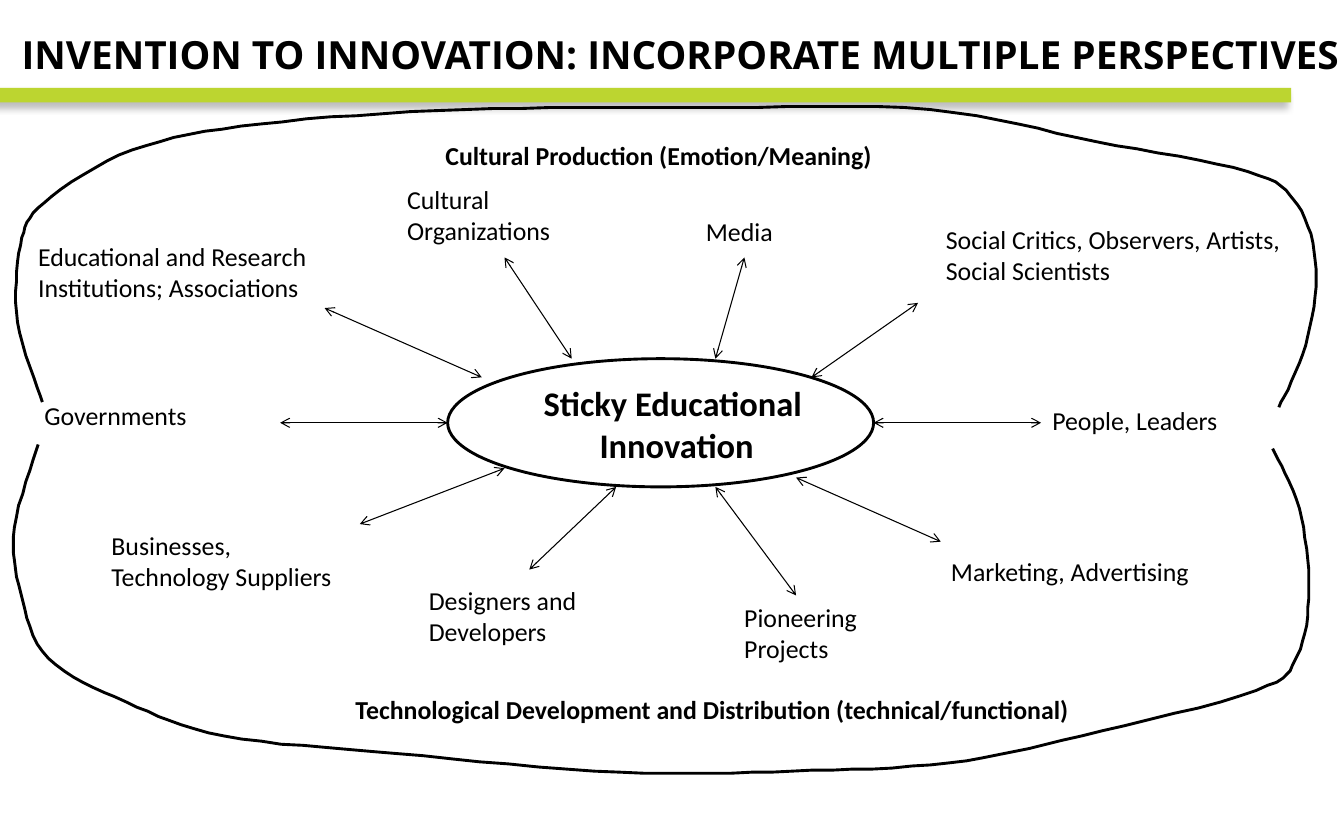
"""Build the slide on taking an invention to innovation with many perspectives."""
import dataclasses

import lxml.etree
import pptx
import pptx.dml.color
import pptx.enum.shapes
import pptx.enum.text
import pptx.oxml
import pptx.oxml.ns
import pptx.util


@dataclasses.dataclass(frozen=True)
class Theme:
    """Colours, fonts, type sizes and line widths."""
    ink: str = "000000"
    accent: str = "BCD530"
    body_font: str = "Calibri"
    title_font: str = "Open Sans"
    label_size: int = 18
    core_size: int = 24
    title_size: int = 27
    arrow_width: float = 0.75
    outline_width: float = 2


@dataclasses.dataclass(frozen=True)
class Perspective:
    """A group of people, its label box, and its arrow to the core."""
    label: str
    left: int
    top: int
    width: int
    outer_tip: tuple
    core_tip: tuple
    lines: int = 2
    wrap: bool = True


def smooth(knots, steps=8):
    """Return points along a Catmull-Rom spline through the knots."""
    padded = [knots[0], *knots, knots[-1]]
    points = [knots[0]]
    for before, start, end, after in zip(padded, padded[1:], padded[2:], padded[3:]):
        for step in range(1, steps + 1):
            t = step / steps
            points.append(tuple(
                b + (c - a) * t / 2
                + (2 * a - 5 * b + 4 * c - d) * t ** 2 / 2
                + (3 * b - a - 3 * c + d) * t ** 3 / 2
                for a, b, c, d in zip(before, start, end, after)))
    return points


class Board:
    """A slide with its theme and a method for each kind of element."""

    def __init__(self, slide, theme):
        """Keep the slide and the theme."""
        self.shapes = slide.shapes
        self.theme = theme

    def px(self, *lengths):
        """Turn px into EMU, at 100 px to the inch."""
        return [pptx.util.Emu(length * SCALE) for length in lengths]

    def color(self, value):
        """Return an RGB colour."""
        return pptx.dml.color.RGBColor.from_string(value)

    def outline(self, shape):
        """Leave a shape unfilled, with a heavy outline."""
        shape.shadow.inherit = False
        shape.fill.background()
        shape.line.color.rgb = self.color(self.theme.ink)
        shape.line.width = pptx.util.Pt(self.theme.outline_width)

    def bar(self, *box):
        """Draw the accent bar with a soft shadow."""
        bar = self.shapes.add_shape(pptx.enum.shapes.MSO_SHAPE.RECTANGLE, *self.px(*box))
        bar.fill.solid()
        bar.fill.fore_color.rgb = self.color(self.theme.accent)
        bar.line.fill.background()
        bar.shadow.inherit = False
        effects = bar._element.spPr.find(pptx.oxml.ns.qn("a:effectLst"))
        effects.append(pptx.oxml.parse_xml(
            f'<a:outerShdw {pptx.oxml.ns.nsdecls("a")} blurRad="63500" dist="63500" '
            f'dir="8100000" rotWithShape="0"><a:srgbClr val="{self.theme.ink}">'
            '<a:alpha val="25000"/></a:srgbClr></a:outerShdw>'))

    def ellipse(self, *box):
        """Draw an outlined ellipse."""
        self.outline(self.shapes.add_shape(pptx.enum.shapes.MSO_SHAPE.OVAL, *self.px(*box)))

    def curve(self, knots):
        """Draw an open, smooth outline through the knots."""
        start, *rest = smooth(knots)
        builder = self.shapes.build_freeform(*start, scale=SCALE)
        builder.add_line_segments(rest, close=False)
        self.outline(builder.convert_to_shape())

    def arrow(self, begin, end):
        """Draw a thin line with an arrowhead at both ends."""
        arrow = self.shapes.add_connector(
            pptx.enum.shapes.MSO_CONNECTOR.STRAIGHT, *self.px(*begin, *end))
        arrow.line.color.rgb = self.color(self.theme.ink)
        arrow.line.width = pptx.util.Pt(self.theme.arrow_width)
        line = arrow.line._get_or_add_ln()
        for head in ("a:headEnd", "a:tailEnd"):
            lxml.etree.SubElement(line, pptx.oxml.ns.qn(head), type="arrow")
        lxml.etree.SubElement(arrow._element.spPr, pptx.oxml.ns.qn("a:effectLst"))

    def text(self, box, words, size=None, font=None, bold=False, wrap=False, centre=False):
        """Write text in a box that grows with it."""
        frame = self.shapes.add_textbox(*self.px(*box)).text_frame
        frame.word_wrap = wrap
        frame.auto_size = pptx.enum.text.MSO_AUTO_SIZE.SHAPE_TO_FIT_TEXT
        frame.text = words
        for paragraph in frame.paragraphs:
            if centre:
                paragraph.alignment = pptx.enum.text.PP_ALIGN.CENTER
            for run in paragraph.runs:
                run.font.name = font or self.theme.body_font
                run.font.size = pptx.util.Pt(size or self.theme.label_size)
                run.font.bold = bold
                run.font.color.rgb = self.color(self.theme.ink)

    def perspective(self, group):
        """Write a group's label and join it to the core with an arrow."""
        box = (group.left, group.top, group.width, LABEL_HEIGHTS[group.lines])
        self.text(box, group.label, wrap=group.wrap)
        self.arrow(group.core_tip, group.outer_tip)


SCALE = 9144
LABEL_HEIGHTS = {1: 40, 2: 71}

CORE_LEFT, CORE_TOP, CORE_WIDTH, CORE_HEIGHT = 433, 347, 412, 124
CORE_RIGHT = CORE_LEFT + CORE_WIDTH
CORE_BOTTOM = CORE_TOP + CORE_HEIGHT
CORE_MIDDLE = CORE_TOP + CORE_HEIGHT // 2
ARROW_REACH = 162

PERSPECTIVES = [
    Perspective("Media", 673, 204, 86, (720, 249), (692, CORE_TOP), lines=1, wrap=False),
    Perspective("People, Leaders", 1008, 387, 182, (CORE_RIGHT + ARROW_REACH, CORE_MIDDLE),
                (CORE_RIGHT, CORE_MIDDLE), lines=1, wrap=False),
    Perspective("Governments", 33, 382, 319, (CORE_LEFT - ARROW_REACH, CORE_MIDDLE),
                (CORE_LEFT, CORE_MIDDLE), lines=1),
    Perspective("Cultural Organizations", 384, 173, 236, (488, 249), (553, CORE_TOP)),
    Perspective("Social Critics, Observers, Artists,\nSocial Scientists",
                905, 211, 388, (888, 293), (785, 365)),
    Perspective("Educational and Research Institutions; Associations",
                27, 228, 363, (314, 298), (466, 365)),
    Perspective("Businesses, Technology Suppliers", 98, 507, 250, (348, 507), (488, 453)),
    Perspective("Designers and Developers", 405, 561, 216, (512, 551), (596, CORE_BOTTOM)),
    Perspective("Pioneering Projects", 710, 577, 200, (770, 576), (692, CORE_BOTTOM)),
    Perspective("Marketing, Advertising", 910, 533, 253, (910, 524), (770, 462),
                lines=1, wrap=False),
]

CULTURAL_KNOTS = [
    (41, 389), (17, 312), (20, 237), (43, 196), (128, 145), (252, 120), (450, 106),
    (675, 104), (900, 106), (1060, 137), (1207, 166), (1255, 198), (1273, 260),
    (1263, 334), (1237, 394),
]
TECHNOLOGICAL_KNOTS = [
    (37, 430), (14, 510), (20, 573), (47, 637), (122, 679), (217, 712), (384, 729),
    (600, 747), (766, 746), (918, 738), (1046, 712), (1215, 668), (1255, 634),
    (1266, 570), (1257, 492), (1231, 434),
]


def main():
    """Draw the slide and save it."""
    deck = pptx.Presentation()
    theme = Theme()
    board = Board(deck.slides.add_slide(deck.slide_layouts[6]), theme)
    deck.slide_width, deck.slide_height = board.px(1300, 800)

    board.bar(-32, 85, 1281, 14)
    board.ellipse(CORE_LEFT, CORE_TOP, CORE_WIDTH, CORE_HEIGHT)
    board.text((514, 365, 281, 91), "Sticky Educational \nInnovation",
               size=theme.core_size, bold=True, centre=True)
    for group in PERSPECTIVES:
        board.perspective(group)
    for knots in (CULTURAL_KNOTS, TECHNOLOGICAL_KNOTS):
        board.curve(knots)
    board.text((421, 130, 436, 40), "Cultural Production (Emotion/Meaning)", bold=True)
    board.text((334, 666, 715, 40),
               "Technological Development and Distribution (technical/functional)", bold=True)
    board.text((11, 25, 1318, 57),
               "INVENTION TO INNOVATION: INCORPORATE MULTIPLE PERSPECTIVES",
               size=theme.title_size, font=theme.title_font, bold=True)
    deck.save("out.pptx")


if __name__ == "__main__":
    main()
